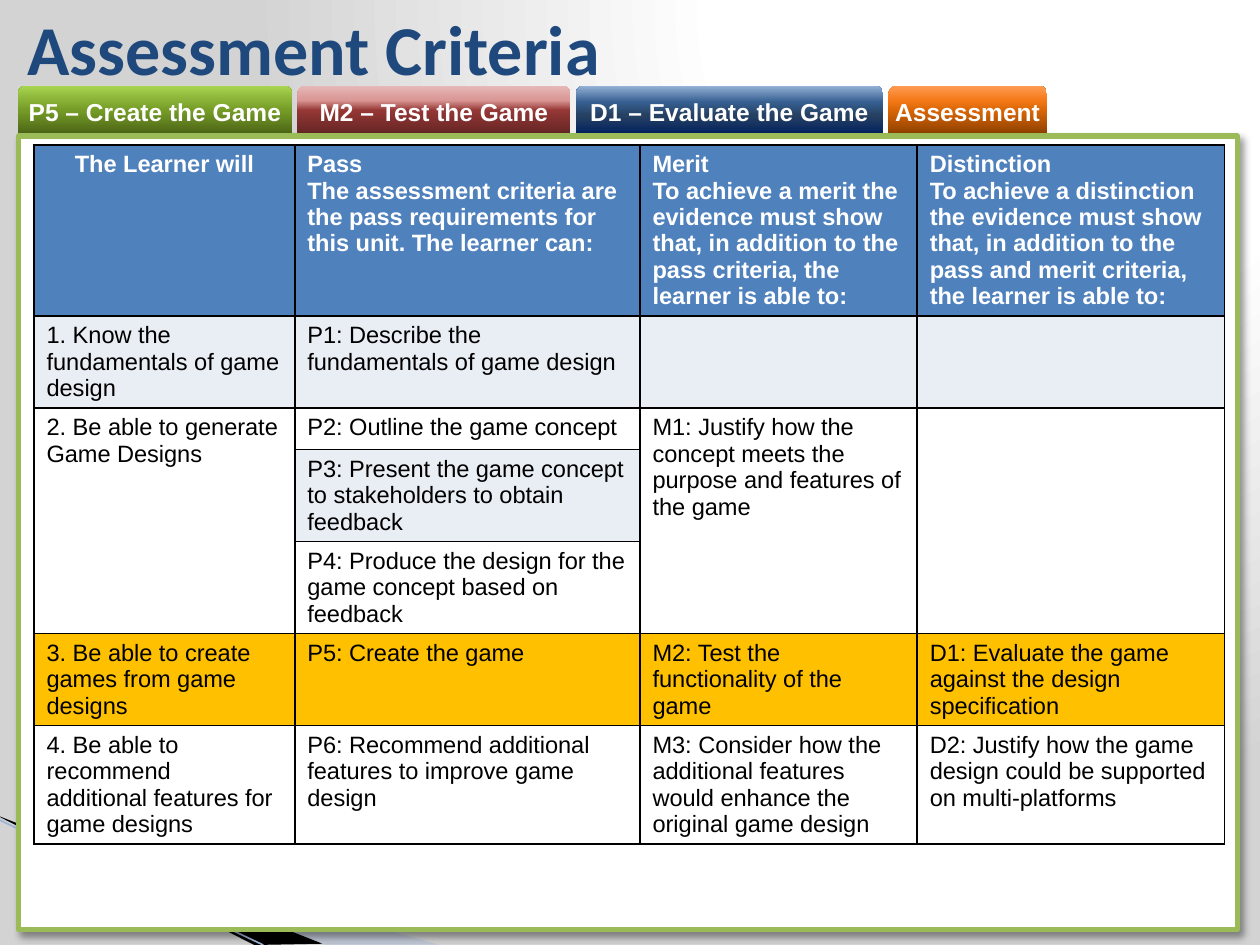
import pptx
import pptx.util
import pptx.dml.color
import pptx.enum.shapes
import pptx.enum.text
import pptx.oxml
import pptx.oxml.ns

Inches, Pt = pptx.util.Inches, pptx.util.Pt
SHAPE = pptx.enum.shapes.MSO_SHAPE
ALIGN = pptx.enum.text.PP_ALIGN
MIDDLE = pptx.enum.text.MSO_ANCHOR.MIDDLE

HEX = {"white": "FFFFFF", "black": "000000", "navy": "1F497D", "head": "4F81BD",
       "pale": "E9EDF4", "gold": "FFC000", "green": "9BBB59", "mist": "A7B9DB",
       "edge": "9EB3D6"}
BACK = [(0, "FFFFFF"), (40, "FFFFFF"), (100, "D3D3D3")]
TITLE = "Assessment Criteria"
TABS = [
    ("P5 – Create the Game", 2.18, [(0, "4A6316"), (50, "769C27"), (70, "89B137"), (100, "A9D651")]),
    ("M2 – Test the Game", 2.17, [(0, "632523"), (50, "953735"), (70, "D99694"), (100, "E6B9B8")]),
    ("D1 – Evaluate the Game", 2.44, [(0, "002060"), (39, "254061"), (67, "376092"), (100, "95B3D7")]),
    ("Assessment", 1.26, [(0, "8B3F00"), (50, "DA6606"), (70, "F47917"), (100, "FF9C54")]),
]
SWOOSH = [
    ("mist", 40, [(0, 6.5), (3.49, 7.5), (2.59, 7.5), (0, 6.49)]),
    ("black", 100, [(0, 6.48), (2.56, 7.49), (2.02, 7.5), (0.01, 6.49)]),
]
COLS = [2.07, 2.74, 2.2, 2.44]
ROWS = [
    (1.35, "head", ["The Learner will",
     "Pass\nThe assessment criteria are the pass requirements for this unit. The learner can:",
     "Merit\nTo achieve a merit the evidence must show that, in addition to the pass criteria, the learner is able to:",
     "Distinction\nTo achieve a distinction the evidence must show that, in addition to the pass and merit criteria, the learner is able to:"]),
    (0.73, "pale", ["1. Know the fundamentals of game design",
     "P1: Describe the fundamentals of game design", "", ""]),
    (0.33, "white", ["2. Be able to generate Game Designs", "P2: Outline the game concept",
     "M1: Justify how the concept meets the purpose and features of the game", ""]),
    (0.73, "pale", ["", "P3: Present the game concept to stakeholders to obtain feedback", "", ""]),
    (0.73, "white", ["", "P4: Produce the design for the game concept based on feedback", "", ""]),
    (0.73, "gold", ["3. Be able to create games from game designs", "P5: Create the game",
     "M2: Test the functionality of the game",
     "D1: Evaluate the game against the design specification"]),
    (0.94, "white", ["4. Be able to recommend\nadditional features for\ngame designs",
     "P6: Recommend additional features to improve game design",
     "M3: Consider how the additional features would enhance the original game design",
     "D2: Justify how the game design could be supported on multi-platforms"]),
]
SPANS = [(2, 4, col) for col in (0, 2, 3)]
FONTS = {
    "title": {"name": "Calibri", "size": Pt(40), "bold": True},
    "tab": {"name": "Arial", "size": Pt(14), "bold": True},
    "head": {"name": "Arial", "size": Pt(13.5), "bold": True},
    "body": {"name": "Arial", "size": Pt(13.5), "bold": False},
}
NS = pptx.oxml.ns.nsdecls("a")


def rgb(name):
    return pptx.dml.color.RGBColor.from_string(HEX[name])


def node(text):
    return pptx.oxml.parse_xml(text.replace(">", f" {NS}>", 1))


def write(frame, text, kind, tint, align=None, pitch=None):
    frame.text = text
    for para in frame.paragraphs:
        para.alignment = align
        para.line_spacing = pitch
        for run in para.runs:
            for key, value in FONTS[kind].items():
                setattr(run.font, key, value)
            run.font.color.rgb = rgb(tint)


def blend(fill, owner, stops, shade):
    fill.gradient()
    old = owner.find(".//" + pptx.oxml.ns.qn("a:gradFill"))
    marks = "".join(f'<a:gs pos="{pos * 1000}"><a:srgbClr val="{tint}"/></a:gs>'
                    for pos, tint in stops)
    new = node(f"<a:gradFill><a:gsLst>{marks}</a:gsLst>{shade}</a:gradFill>")
    old.getparent().replace(old, new)


def paint(shape, name):
    shape.shadow.inherit = False
    shape.fill.solid()
    shape.fill.fore_color.rgb = rgb(name)
    shape.line.fill.background()


def add_swoosh(slide):
    for name, alpha, points in SWOOSH:
        spots = [(Inches(x), Inches(y)) for x, y in points]
        pen = slide.shapes.build_freeform(*spots[0], scale=1.0)
        pen.add_line_segments(spots[1:], close=True)
        shape = pen.convert_to_shape()
        paint(shape, name)
        tint = shape.element.spPr.find(".//" + pptx.oxml.ns.qn("a:srgbClr"))
        tint.append(node(f'<a:alpha val="{alpha * 1000}"></a:alpha>'))
    line = slide.shapes.add_connector(pptx.enum.shapes.MSO_CONNECTOR.STRAIGHT,
                                      0, Inches(6.51), Inches(2.09), Inches(7.5))
    line.line.color.rgb = rgb("edge")
    line.line.width = Pt(0.95)
    line.element.spPr.append(node("<a:effectLst></a:effectLst>"))


def add_tabs(slide):
    left = 0.14
    for text, width, stops in TABS:
        tab = slide.shapes.add_shape(SHAPE.ROUND_2_SAME_RECTANGLE, Inches(left),
                                     Inches(0.68), Inches(width), Inches(0.39))
        tab.shadow.inherit = False
        tab.line.fill.background()
        blend(tab.fill, tab.element.spPr, stops, '<a:lin ang="16200000" scaled="0"/>')
        frame = tab.text_frame
        for side in ("left", "right", "top", "bottom"):
            setattr(frame, "margin_" + side, 0)
        frame.vertical_anchor = MIDDLE
        write(frame, text, "tab", "white", ALIGN.CENTER)
        left += width + 0.04


def add_panel(slide):
    panel = slide.shapes.add_shape(SHAPE.RECTANGLE, Inches(0.15), Inches(1.08),
                                   Inches(9.67), Inches(6.3))
    paint(panel, "white")
    panel.line.color.rgb = rgb("green")
    panel.line.width = Pt(3)
    glow = panel.element.spPr.find(pptx.oxml.ns.qn("a:effectLst"))
    glow.append(node(f'<a:outerShdw blurRad="{Pt(4)}" dist="{Pt(3)}" dir="2700000">'
                     f'<a:srgbClr val="{HEX["black"]}"><a:alpha val="40000"/></a:srgbClr>'
                     '</a:outerShdw>'))


def add_title(slide):
    box = slide.shapes.add_textbox(Inches(0.12), 0, Inches(8.43), Inches(0.76))
    box.text_frame.word_wrap = True
    box.text_frame.vertical_anchor = MIDDLE
    write(box.text_frame, TITLE, "title", "navy")


def add_grid(slide):
    high = sum(row[0] for row in ROWS)
    grid = slide.shapes.add_table(len(ROWS), len(COLS), Inches(0.27), Inches(1.15),
                                  Inches(sum(COLS)), Inches(high)).table
    for col, width in zip(grid.columns, COLS):
        col.width = Inches(width)
    for r, (height, back, texts) in enumerate(ROWS):
        grid.rows[r].height = Inches(height)
        kind, tint = ("head", "white") if r == 0 else ("body", "black")
        for c, text in enumerate(texts):
            cell = grid.cell(r, c)
            align = ALIGN.CENTER if r == c == 0 else None
            write(cell.text_frame, text, kind, tint, align, Pt(15.1))
            edges = cell._tc.get_or_add_tcPr()
            for side in "LRTB":
                edges.append(node(f'<a:ln{side} w="{Pt(1)}"><a:solidFill><a:srgbClr val="{HEX["black"]}"/>'
                                  f'</a:solidFill></a:ln{side}>'))
            cell.fill.solid()
            merged = any(top <= r <= end and c == col for top, end, col in SPANS)
            cell.fill.fore_color.rgb = rgb("white" if merged else back)
    for top, end, col in SPANS:
        grid.cell(top, col).merge(grid.cell(end, col))


def main():
    deck = pptx.Presentation()
    deck.slide_width, deck.slide_height = Inches(10), Inches(7.5)
    slide = deck.slides.add_slide(deck.slide_layouts[6])
    blend(slide.background.fill, slide.element, BACK,
          '<a:path path="circle"><a:fillToRect l="65000" t="0" r="0" b="98000"/></a:path>')
    for build in (add_swoosh, add_tabs, add_panel, add_title, add_grid):
        build(slide)
    deck.save("out.pptx")


if __name__ == "__main__":
    main()
